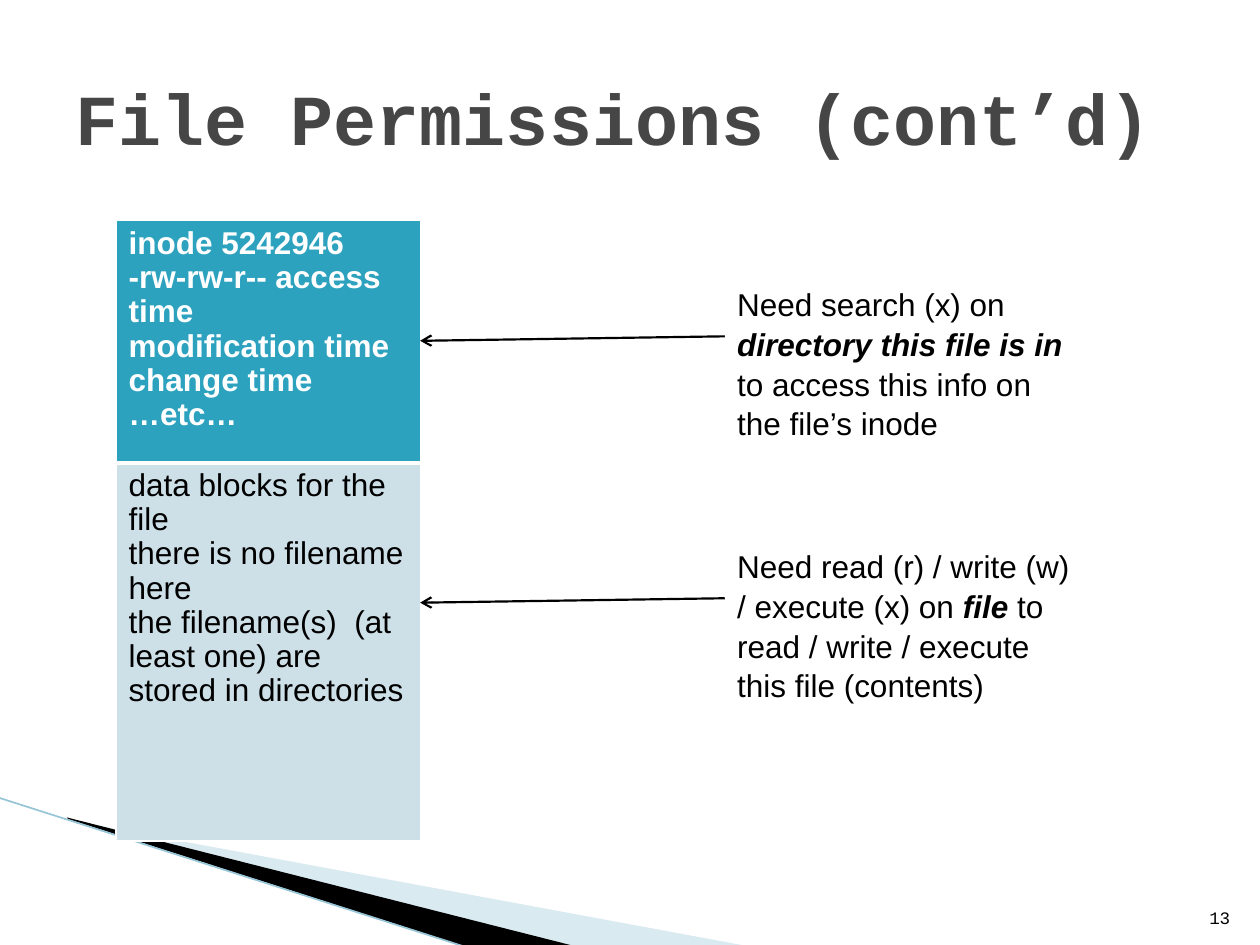
from dataclasses import dataclass

from lxml import etree
from pptx import Presentation
from pptx.dml.color import RGBColor
from pptx.enum.shapes import MSO_CONNECTOR
from pptx.enum.text import MSO_ANCHOR, PP_ALIGN
from pptx.oxml.ns import qn
from pptx.util import Cm, Pt

STRAIGHT = MSO_CONNECTOR.STRAIGHT
MIDDLE, BOTTOM = MSO_ANCHOR.MIDDLE, MSO_ANCHOR.BOTTOM
LEFT, RIGHT = PP_ALIGN.LEFT, PP_ALIGN.RIGHT


@dataclass(frozen=True)
class Theme:
    sans: str = "Arial"
    mono: str = "Courier New"
    title_size: int = 41
    body_size: int = 18
    number_size: int = 10
    title: str = "464646"
    ink: str = "000000"
    white: str = "FFFFFF"
    header: str = "2DA2BF"
    body: str = "CDE0E8"
    swoosh: str = "A0CBDC"
    edge: str = "97C5D8"


class SlideBuilder:
    """Draws styled elements on the current slide."""

    def __init__(self, slide, theme):
        self.slide = slide
        self.theme = theme

    def style(self, para, size, color, face, bold=False):
        for span in para.runs:
            span.font.name = face
            span.font.size = Pt(size)
            span.font.bold = bold
            span.font.color.rgb = RGBColor.from_string(color)

    def title(self, text, left, top, width, height):
        box = self.slide.shapes.title
        box.left, box.top, box.width, box.height = map(Cm, (left, top, width, height))
        frame = box.text_frame
        frame.text = text
        frame.vertical_anchor = MIDDLE
        para = frame.paragraphs[0]
        para.alignment = LEFT
        self.style(para, self.theme.title_size, self.theme.title, self.theme.mono, True)

    def text_box(self, left, top, width, height):
        box = self.slide.shapes.add_textbox(*map(Cm, (left, top, width, height)))
        box.text_frame.word_wrap = True
        return box.text_frame

    def page_number(self, text, left, top, size):
        frame = self.text_box(left, top, size, size)
        frame.text = text
        frame.vertical_anchor = BOTTOM
        para = frame.paragraphs[0]
        para.alignment = RIGHT
        self.style(para, self.theme.number_size, self.theme.ink, self.theme.mono)

    def note(self, before, stress, after, left, top, width, height):
        para = self.text_box(left, top, width, height).paragraphs[0]
        para.line_spacing = 1.05
        for text in (before, stress, after):
            para.add_run().text = text
        self.style(para, self.theme.body_size, self.theme.ink, self.theme.sans)
        strong = para.runs[1].font
        strong.bold = strong.italic = True

    def wedge(self, points, color, alpha=None):
        corners = [(Cm(x), Cm(y)) for x, y in points]
        builder = self.slide.shapes.build_freeform(*corners[0])
        builder.add_line_segments(corners[1:], close=True)
        shape = builder.convert_to_shape()
        shape.shadow.inherit = False
        shape.line.fill.background()
        shape.fill.solid()
        shape.fill.fore_color.rgb = RGBColor.from_string(color)
        if alpha is not None:
            tint = shape.fill._xPr.find(".//" + qn("a:srgbClr"))
            etree.SubElement(tint, qn("a:alpha"), val=str(alpha * 1000))

    def line(self, start, end, color, width, arrow=False):
        line = self.slide.shapes.add_connector(STRAIGHT, *map(Cm, start + end))
        line.line.color.rgb = RGBColor.from_string(color)
        line.line.width = Pt(width)
        if arrow:
            etree.SubElement(line.line._get_or_add_ln(), qn("a:tailEnd"), type="arrow")
        etree.SubElement(line._element.spPr, qn("a:effectLst"))

    def borders(self, cell, widths):
        properties = cell._tc.get_or_add_tcPr()
        for index, (side, width) in enumerate(zip("LRTB", widths)):
            border = etree.Element(qn("a:ln" + side), w=str(Pt(width)))
            fill = etree.SubElement(border, qn("a:solidFill"))
            etree.SubElement(fill, qn("a:srgbClr"), val=self.theme.white)
            properties.insert(index, border)

    def table(self, rows, left, top, width):
        total = sum(row[0] for row in rows)
        frame = self.slide.shapes.add_table(len(rows), 1, *map(Cm, (left, top, width, total)))
        table = frame.table
        for index, (height, lines, fill, ink, bold, widths) in enumerate(rows):
            table.rows[index].height = Cm(height)
            cell = table.cell(index, 0)
            cell.text_frame.text = "\n".join(lines)
            for para in cell.text_frame.paragraphs:
                para.line_spacing = 0.97
                self.style(para, self.theme.body_size, ink, self.theme.sans, bold)
            cell.fill.solid()
            cell.fill.fore_color.rgb = RGBColor.from_string(fill)
            self.borders(cell, widths)


def main():
    theme = Theme()
    deck = Presentation()
    deck.slide_width, deck.slide_height = Cm(25.4), Cm(19.05)
    page = SlideBuilder(deck.slides.add_slide(deck.slide_layouts[5]), theme)

    page.wedge([(1.4, 16.54), (15.11, 19.08), (11.58, 19.08), (1.4, 16.51)], theme.swoosh, 40)
    page.wedge([(1.35, 16.48), (11.61, 19.08), (9.45, 19.1), (1.37, 16.51)], theme.ink)
    page.line((-0.03, 16.08), (9.42, 19.1), theme.edge, 0.95)
    page.title("File Permissions (cont’d)", 1.27, 0.76, 22.86, 3.18)
    page.page_number("13", 24.03, 17.81, 1.02)

    inode = ["inode 5242946", "-rw-rw-r-- access time", "modification time",
             "change time", "…etc…"]
    data = ["data blocks for the file", "there is no filename here",
            "the filename(s)  (at least one) are stored in directories"]
    page.table([(4.88, inode, theme.header, theme.white, True, (1, 1, 1, 3)),
                (7.62, data, theme.body, theme.ink, False, (1, 1, 3, 1))],
               2.34, 4.45, 6.15)

    notes = [
        (5.59, "Need search (x) on ", "directory this file is in",
         " to access this info on the file’s inode"),
        (10.87, "Need read (r) / write (w) / execute (x) on ", "file ",
         "to read / write / execute this file (contents)"),
    ]
    note_left, table_edge = 14.61, 8.47
    for top, before, stress, after in notes:
        page.note(before, stress, after, note_left, top, 7.21, 3.33)
        page.line((note_left, top + 1.19), (table_edge, top + 1.28), theme.ink, 1.25, arrow=True)

    deck.save("out.pptx")


if __name__ == "__main__":
    main()
